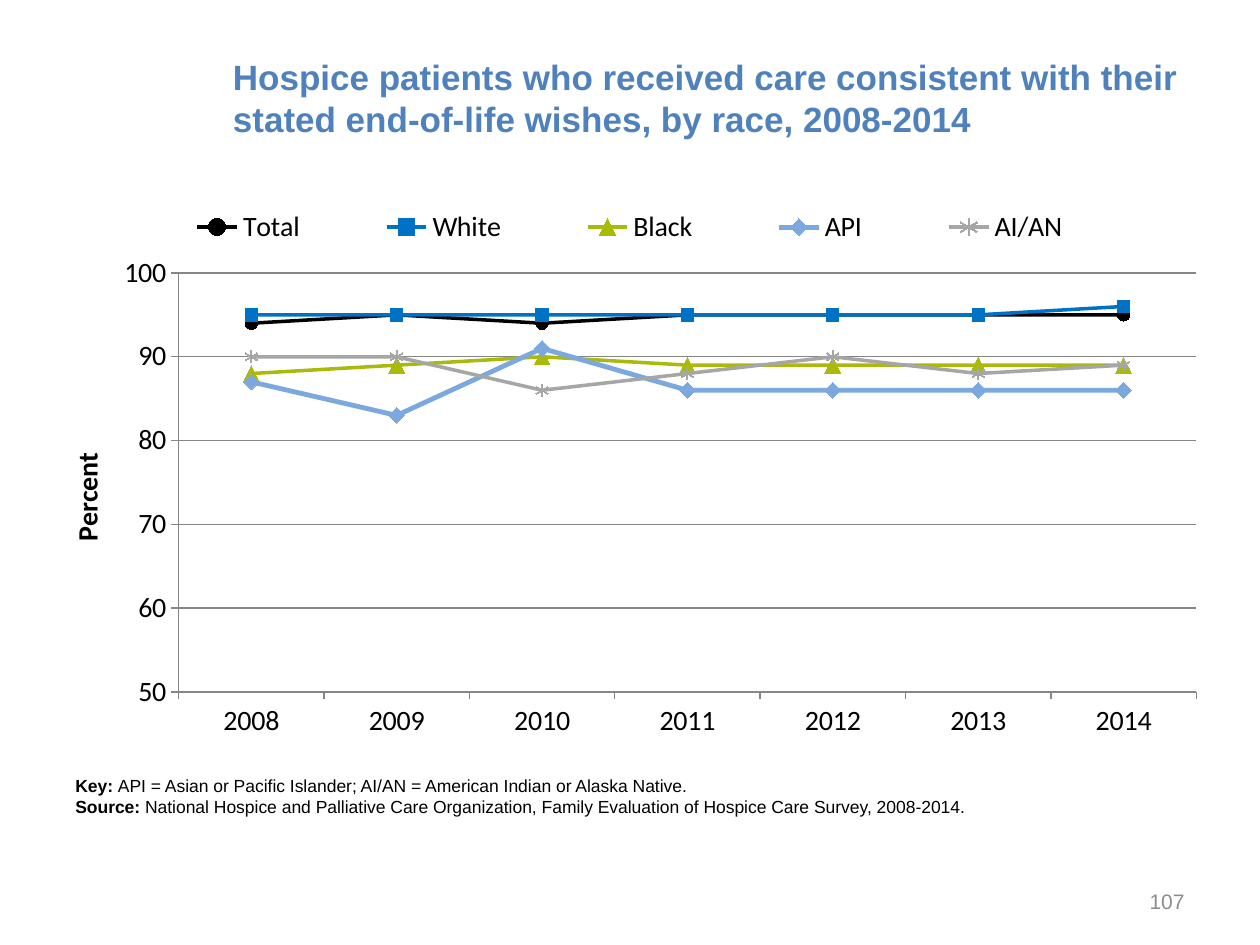
from dataclasses import dataclass

import pptx
import pptx.chart.data
import pptx.dml.color
import pptx.enum.chart
import pptx.enum.text
import pptx.oxml
import pptx.oxml.ns
import pptx.util

Inches = pptx.util.Inches
Pt = pptx.util.Pt
Marker = pptx.enum.chart.XL_MARKER_STYLE
Align = pptx.enum.text.PP_ALIGN
Anchor = pptx.enum.text.MSO_ANCHOR


@dataclass(frozen=True)
class Theme:
    font: str = "Arial"
    chart_font: str = "Calibri"
    title: str = "4F81BD"
    text: str = "000000"
    muted: str = "8C8C8C"
    grid: str = "868686"
    total: str = "000000"
    white: str = "0072C6"
    black: str = "AABA0A"
    api: str = "7BA8DF"
    ai_an: str = "A6A6A6"
    title_size: float = 20
    chart_size: float = 16
    number_size: float = 12
    note_size: float = 10


THEME = Theme()
YEARS = [str(year) for year in range(2008, 2015)]
# name, values, colour, line width, marker, marker size
RACES = [
    ("Total", (94, 95, 94, 95, 95, 95, 95), THEME.total, 2, Marker.CIRCLE, 7),
    ("White", (95, 95, 95, 95, 95, 95, 96), THEME.white, 2, Marker.SQUARE, 7),
    ("Black", (88, 89, 90, 89, 89, 89, 89), THEME.black, 2, Marker.TRIANGLE, 9),
    ("API", (87, 83, 91, 86, 86, 86, 86), THEME.api, 2.75, Marker.DIAMOND, 9),
    ("AI/AN", (90, 90, 86, 88, 90, 88, 89), THEME.ai_an, 2, Marker.STAR, 7),
]


def rgb(value):
    return pptx.dml.color.RGBColor.from_string(value)


def set_font(font, size, color=THEME.text, bold=False, name=THEME.font):
    font.name = name
    font.size = Pt(size)
    font.bold = bold
    font.color.rgb = rgb(color)


def add_run(p, text, **style):
    r = p.add_run()
    r.text = text
    set_font(r.font, **style)


def manual_layout(x, y, w, h, inner=False):
    """Return a c:layout element in fractions of the chart area."""
    target = '<c:layoutTarget val="inner"/>' if inner else ""
    return pptx.oxml.parse_xml(
        f'<c:layout {pptx.oxml.ns.nsdecls("c")}><c:manualLayout>{target}'
        '<c:xMode val="edge"/><c:yMode val="edge"/>'
        f'<c:x val="{x}"/><c:y val="{y}"/><c:w val="{w}"/><c:h val="{h}"/>'
        "</c:manualLayout></c:layout>"
    )


class SlideBuilder:
    def __init__(self, prs, theme):
        self.theme = theme
        self.s = prs.slides.add_slide(prs.slide_layouts[6])

    def text(self, box, paragraphs, size, color=None, align=Align.LEFT, anchor=Anchor.TOP):
        """Add a text box; each paragraph is a list of (text, bold) pairs."""
        sp = self.s.shapes.add_textbox(*map(Inches, box))
        tf = sp.text_frame
        tf.word_wrap = True
        tf.vertical_anchor = anchor
        for i, runs in enumerate(paragraphs):
            p = tf.add_paragraph() if i else tf.paragraphs[0]
            p.alignment = align
            for text, bold in runs:
                add_run(p, text, size=size, color=color or self.theme.text, bold=bold)

    def line_chart(self, box, categories, series, axis_title):
        data = pptx.chart.data.CategoryChartData(number_format="0")
        data.categories = categories
        for name, values, *_ in series:
            data.add_series(name, values)
        kind = pptx.enum.chart.XL_CHART_TYPE.LINE_MARKERS
        chart = self.s.shapes.add_chart(kind, *map(Inches, box), data).chart
        set_font(chart.font, self.theme.note_size)
        chart.has_title = False
        plot = chart.plots[0]
        plot.vary_by_categories = False
        for line, (_, _, color, width, marker, size) in zip(plot.series, series):
            self.style_series(line, color, width, marker, size)
        self.style_axes(chart, axis_title)
        self.style_legend(chart)
        plot_area = chart.element.chart.plotArea
        for old in plot_area.findall(pptx.oxml.ns.qn("c:layout")):
            plot_area.remove(old)
        plot_area.insert(0, manual_layout(0.102, 0.126, 0.898, 0.739, inner=True))

    def style_series(self, line, color, width, marker, size):
        line.smooth = False
        line.format.line.color.rgb = rgb(color)
        line.format.line.width = Pt(width)
        line.marker.style = marker
        line.marker.size = size
        fmt = line.marker.format
        fmt.line.color.rgb = rgb(color)
        if marker == Marker.STAR:
            fmt.fill.background()
        else:
            fmt.fill.solid()
            fmt.fill.fore_color.rgb = rgb(color)

    def style_axes(self, chart, title):
        t = self.theme
        value_axis = chart.value_axis
        for axis in (chart.category_axis, value_axis):
            set_font(axis.tick_labels.font, t.chart_size, name=t.chart_font)
            axis.major_tick_mark = pptx.enum.chart.XL_TICK_MARK.OUTSIDE
            axis.format.line.color.rgb = rgb(t.grid)
        value_axis.minimum_scale = 50
        value_axis.maximum_scale = 100
        value_axis.major_unit = 10
        value_axis.tick_labels.number_format = "0"
        value_axis.tick_labels.number_format_is_linked = False
        value_axis.has_major_gridlines = True
        value_axis.major_gridlines.format.line.color.rgb = rgb(t.grid)
        p = value_axis.axis_title.text_frame.paragraphs[0]
        add_run(p, title, size=t.chart_size, bold=True, name=t.chart_font)

    def style_legend(self, chart):
        chart.has_legend = True
        legend = chart.legend
        legend.position = pptx.enum.chart.XL_LEGEND_POSITION.TOP
        legend.include_in_layout = False
        set_font(legend.font, self.theme.chart_size, name=self.theme.chart_font)
        position = legend._element.find(pptx.oxml.ns.qn("c:legendPos"))
        for old in legend._element.findall(pptx.oxml.ns.qn("c:layout")):
            legend._element.remove(old)
        position.addnext(manual_layout(0.05, 0.01, 0.9, 0.07))


def main():
    prs = pptx.Presentation()
    prs.slide_width, prs.slide_height = Inches(10), Inches(7.5)
    slide = SlideBuilder(prs, THEME)
    title = ("Hospice patients who received care consistent with their "
             "stated end-of-life wishes, by race, 2008-2014")
    slide.text((1.75, 0.3, 7.75, 0.95), [[(title, True)]],
               THEME.title_size, THEME.title, anchor=Anchor.MIDDLE)
    slide.line_chart((0.5, 1.6, 9, 4.5), YEARS, RACES, "Percent")
    notes = [
        [("Key: ", True),
         ("API = Asian or Pacific Islander; AI/AN = American Indian or Alaska Native.", False)],
        [("Source: ", True),
         ("National Hospice and Palliative Care Organization, "
          "Family Evaluation of Hospice Care Survey, 2008-2014.", False)],
    ]
    slide.text((0.5, 6.1, 9, 0.44), notes, THEME.note_size)
    slide.text((7.17, 6.95, 2.33, 0.4), [[("107", False)]], THEME.number_size,
               THEME.muted, Align.RIGHT, Anchor.MIDDLE)
    prs.save("out.pptx")


if __name__ == "__main__":
    main()
